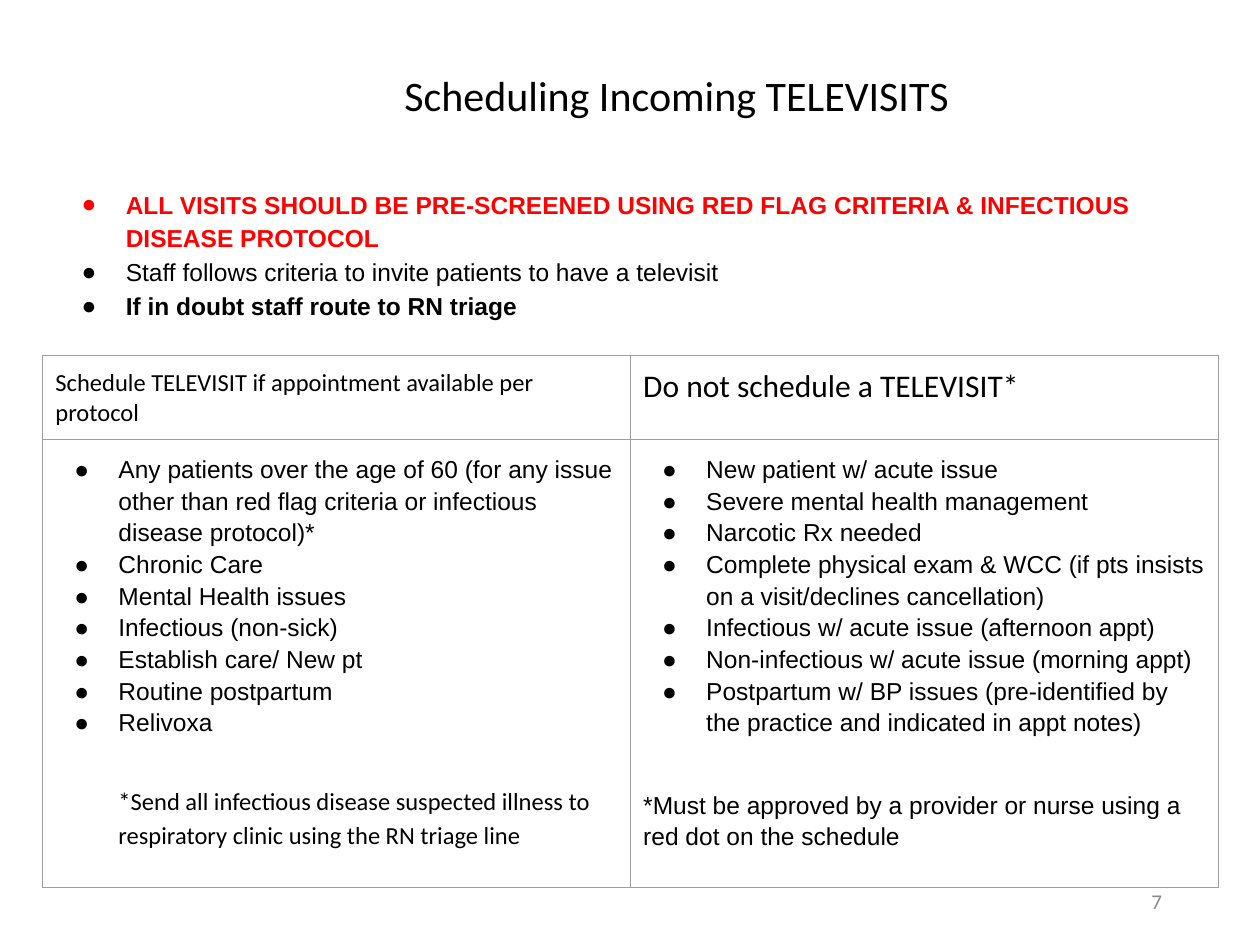
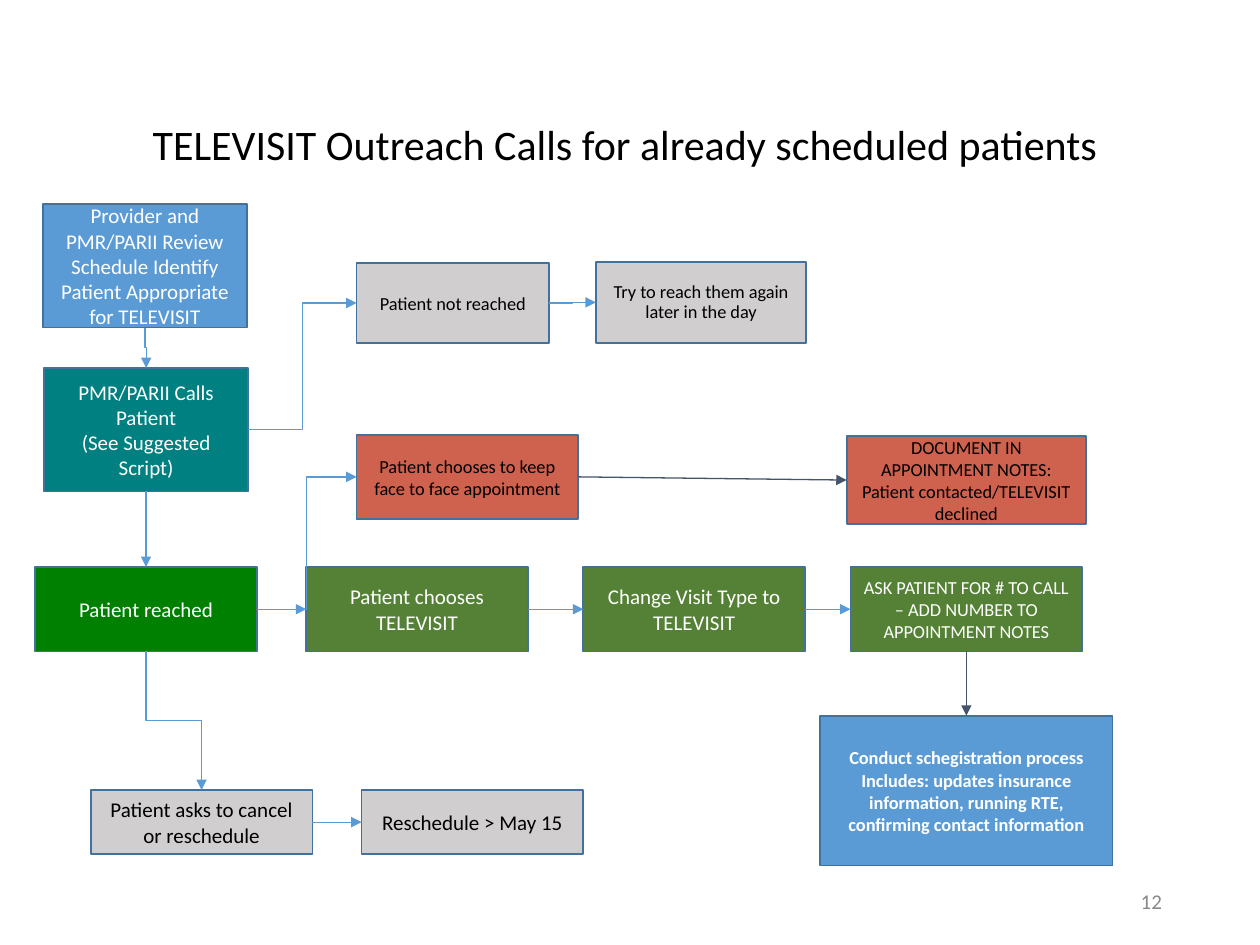
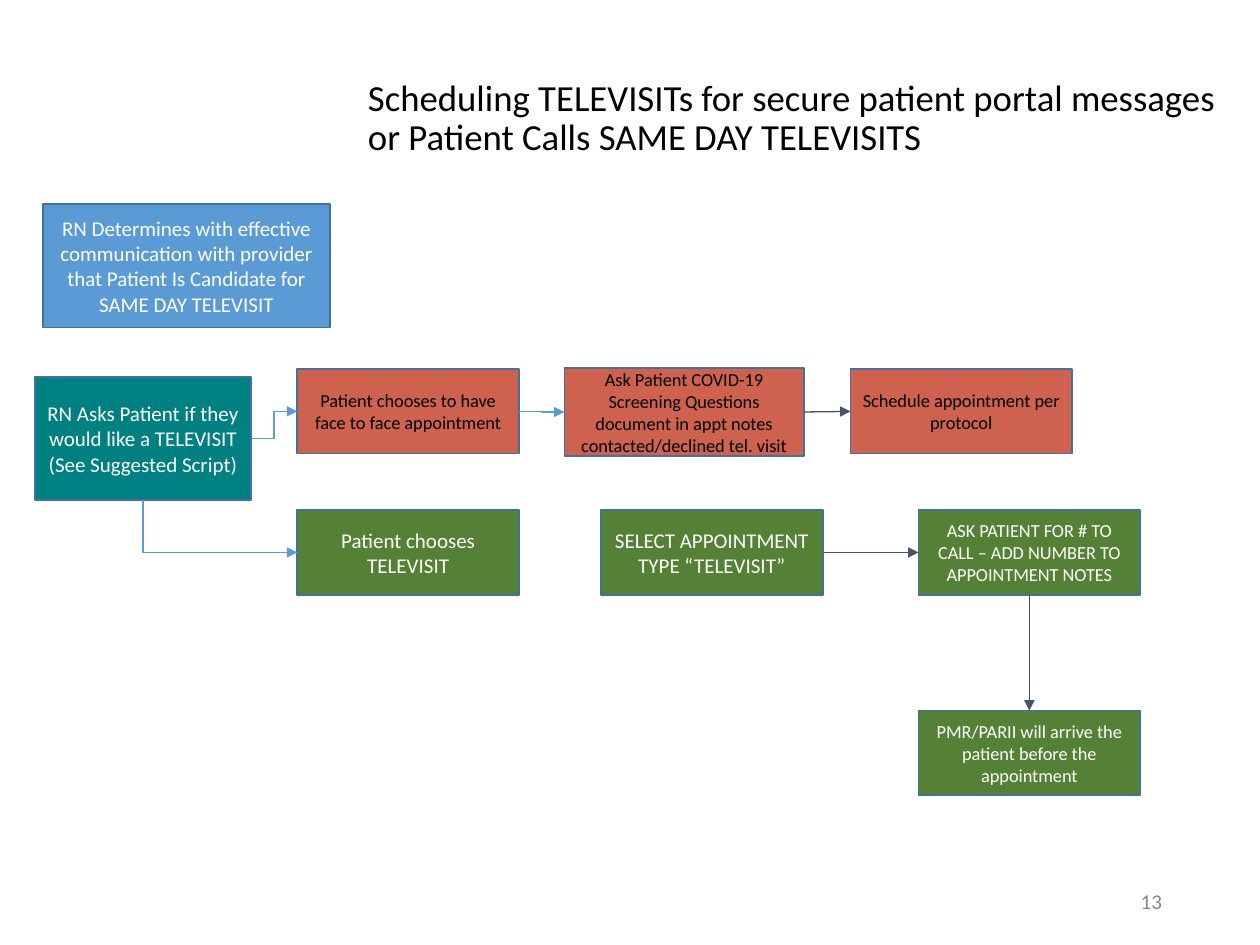
"""Build three slides on scheduling televisits: a criteria table and two call flows."""
from dataclasses import dataclass
from typing import NamedTuple

import lxml.etree
import pptx
import pptx.dml.color
import pptx.enum.shapes
import pptx.enum.text
import pptx.oxml.ns
import pptx.presentation
import pptx.shapes.autoshape
import pptx.shapes.connector
import pptx.slide
import pptx.table
import pptx.text.text
import pptx.util

RGBColor = pptx.dml.color.RGBColor
BLACK = RGBColor(0x00, 0x00, 0x00)
WHITE = RGBColor(0xFF, 0xFF, 0xFF)
RED = RGBColor(0xFF, 0x00, 0x00)
PAGE_GRAY = RGBColor(0x88, 0x88, 0x88)
RULE_GRAY = RGBColor(0x9E, 0x9E, 0x9E)
BLUE = RGBColor(0x5B, 0x9B, 0xD5)
OUTLINE = RGBColor(0x42, 0x71, 0x9B)
NAVY = RGBColor(0x44, 0x54, 0x6A)
TEAL = RGBColor(0x00, 0x80, 0x80)
GREEN = RGBColor(0x00, 0x80, 0x00)
OLIVE = RGBColor(0x54, 0x81, 0x35)
BRICK = RGBColor(0xCF, 0x61, 0x4F)
SILVER = RGBColor(0xD0, 0xCE, 0xCE)

HEADING_FONT, LIST_FONT = "Calibri", "Arial"
LEFT = pptx.enum.text.PP_ALIGN.LEFT
CENTER = pptx.enum.text.PP_ALIGN.CENTER
RIGHT = pptx.enum.text.PP_ALIGN.RIGHT
MIDDLE = pptx.enum.text.MSO_ANCHOR.MIDDLE
TOP_SIDE, LEFT_SIDE, BOTTOM_SIDE, RIGHT_SIDE = range(4)

SLIDE_WIDTH, SLIDE_HEIGHT = pptx.util.Inches(10), pptx.util.Inches(7.5)
COLUMNS, ROWS = 100, 75
LIST_INDENT, BULLET_HANG = 5, 3.5


class Area(NamedTuple):
    column: float
    row: float
    columns: float
    rows: float


@dataclass(frozen=True)
class Line:
    text: str
    size: float = 14
    font: str = LIST_FONT
    color: RGBColor = BLACK
    bold: bool = False
    bullet: bool = False
    indent: float = 0
    spacing: float = 1
    before: float = 0
    align: pptx.enum.text.PP_ALIGN = LEFT


@dataclass(frozen=True)
class Step:
    area: Area
    fill: RGBColor
    lines: tuple[str, ...]
    size: float = 12
    bold: bool = False
    spacing: float = 1


@dataclass(frozen=True)
class Link:
    start: str
    end: str
    leave: int = RIGHT_SIDE
    arrive: int = LEFT_SIDE
    color: RGBColor = BLUE


@dataclass(frozen=True)
class Flow:
    title: Line
    title_area: Area
    page: int
    steps: dict[str, Step]
    links: tuple[Link, ...]


PAGE_AREA = Area(70.7, 69.5, 22.5, 4)
CRITERIA_ROWS = (6.7, 33)
STEP_SIZE = (17.6, 6.7)
RESCHEDULE_SIZE = (17.6, 5.1)
START_SIZE = (16.2, 9.8)

SCREENING_RULES = (
    Line("ALL VISITS SHOULD BE PRE-SCREENED USING RED FLAG CRITERIA & INFECTIOUS DISEASE PROTOCOL",
         color=RED, bold=True, bullet=True, spacing=1.15),
    Line("Staff follows criteria to invite patients to have a televisit", bullet=True, spacing=1.15),
    Line("If in doubt staff route to RN triage", bold=True, bullet=True, spacing=1.15),
)
TELEVISIT_CASES = (
    "Any patients over the age of 60 (for any issue other than red flag criteria or "
    "infectious disease protocol)*",
    "Chronic Care",
    "Mental Health issues",
    "Infectious (non-sick)",
    "Establish care/ New pt",
    "Routine postpartum",
    "Relivoxa",
)
EXCLUDED_CASES = (
    "New patient w/ acute issue",
    "Severe mental health management",
    "Narcotic Rx needed",
    "Complete physical exam & WCC (if pts insists on a visit/declines cancellation)",
    "Infectious w/ acute issue (afternoon appt)",
    "Non-infectious w/ acute issue (morning appt)",
    "Postpartum w/ BP issues (pre-identified by the practice and indicated in appt notes)",
)
RESPIRATORY_NOTE = Line(
    "*Send all infectious disease suspected illness to respiratory clinic using the RN triage line",
    font=HEADING_FONT, indent=LIST_INDENT, spacing=1.15, before=26)
APPROVAL_NOTE = Line(
    "*Must be approved by a provider or nurse using a red dot on the schedule",
    spacing=1.15, before=29)

ASK_NUMBER = ("ASK PATIENT FOR # TO CALL – ADD NUMBER TO APPOINTMENT NOTES",)
CHOOSES_TELEVISIT = ("Patient chooses TELEVISIT",)

OUTREACH = Flow(
    Line("TELEVISIT Outreach Calls for already scheduled patients",
         24, HEADING_FONT, spacing=0.9, align=CENTER),
    Area(2.4, 6.2, 94.4, 10.9),
    12,
    {
        "review": Step(Area(3.4, 16.2, *START_SIZE), BLUE,
                       ("Provider and PMR/PARII Review",
                        "Schedule Identify Patient Appropriate for TELEVISIT")),
        "call": Step(Area(3.5, 29.2, *START_SIZE), TEAL,
                     ("PMR/PARII Calls Patient", "(See Suggested Script)")),
        "keep": Step(Area(28.3, 34.5, *STEP_SIZE), BRICK,
                     ("Patient chooses to keep face to face appointment",), 10.5),
        "televisit": Step(Area(24.3, 45, *STEP_SIZE), OLIVE, CHOOSES_TELEVISIT),
        "cancel": Step(Area(7.2, 62.7, *RESCHEDULE_SIZE), SILVER,
                       ("Patient asks to cancel or reschedule",)),
        "missed": Step(Area(28.3, 20.9, 15.3, 6.3), SILVER, ("Patient not reached",), 10.5),
        "reached": Step(Area(2.8, 45, *STEP_SIZE), GREEN, ("Patient reached",)),
        "retry": Step(Area(47.3, 20.8, 16.7, 6.4), SILVER,
                      ("Try to reach them again later in the day",), 10.5, spacing=0.9),
        "change": Step(Area(46.3, 45, *STEP_SIZE), OLIVE, ("Change Visit Type to TELEVISIT",)),
        "number": Step(Area(67.5, 45, 18.4, 6.7), OLIVE, ASK_NUMBER, 10.5),
        "document": Step(Area(67.2, 34.6, 19, 7), BRICK,
                         ("DOCUMENT IN APPOINTMENT NOTES: Patient contacted/TELEVISIT declined",),
                         10.5),
        "reschedule": Step(Area(28.7, 62.7, *RESCHEDULE_SIZE), SILVER, ("Reschedule > May 15",)),
        "register": Step(Area(65.1, 56.8, 23.2, 11.9), BLUE,
                         ("Conduct schegistration process Includes: updates insurance "
                          "information, running RTE, confirming contact information",),
                         10.5, bold=True),
    },
    (
        Link("call", "missed"),
        Link("reached", "keep"),
        Link("call", "reached", BOTTOM_SIDE, TOP_SIDE),
        Link("missed", "retry"),
        Link("televisit", "change"),
        Link("change", "number"),
        Link("cancel", "reschedule"),
        Link("review", "call", BOTTOM_SIDE, TOP_SIDE),
        Link("reached", "cancel", BOTTOM_SIDE, TOP_SIDE),
        Link("reached", "televisit"),
        Link("keep", "document", color=NAVY),
        Link("number", "register", BOTTOM_SIDE, TOP_SIDE, NAVY),
    ),
)

SAME_DAY = Flow(
    Line("Scheduling TELEVISITs for secure patient portal messages or Patient Calls "
         "SAME DAY TELEVISITS", 21, HEADING_FONT, spacing=0.9),
    Area(28.2, 4, 71.3, 10.9),
    13,
    {
        "candidate": Step(Area(3.4, 16.2, 22.8, 9.8), BLUE,
                          ("RN Determines with effective communication with provider "
                           "that Patient Is Candidate for SAME DAY TELEVISIT",)),
        "ask": Step(Area(2.8, 29.9, 17.1, 9.8), TEAL,
                    ("RN Asks Patient if they would like a TELEVISIT", "(See Suggested Script)")),
        "in person": Step(Area(23.6, 29.3, *STEP_SIZE), BRICK,
                          ("Patient chooses to have face to face appointment",), 10.5),
        "screen": Step(Area(44.8, 29.2, 19, 7), BRICK,
                       ("Ask Patient COVID-19 Screening Questions",
                        "document in appt notes contacted/declined tel. visit"), 10.5),
        "televisit": Step(Area(23.6, 40.5, *STEP_SIZE), OLIVE, CHOOSES_TELEVISIT),
        "select": Step(Area(47.7, 40.5, *STEP_SIZE), OLIVE,
                       ("SELECT APPOINTMENT TYPE “TELEVISIT”",)),
        "number": Step(Area(72.9, 40.5, *STEP_SIZE), OLIVE, ASK_NUMBER, 10.5),
        "schedule": Step(Area(67.5, 29.3, *STEP_SIZE), BRICK,
                         ("Schedule appointment per protocol",), 10.5),
        "arrive": Step(Area(72.9, 56.4, *STEP_SIZE), OLIVE,
                       ("PMR/PARII will arrive the patient before the appointment",), 10.5),
    },
    (
        Link("ask", "televisit", BOTTOM_SIDE, LEFT_SIDE),
        Link("ask", "in person"),
        Link("in person", "screen"),
        Link("screen", "schedule", color=NAVY),
        Link("select", "number", color=NAVY),
        Link("number", "arrive", BOTTOM_SIDE, TOP_SIDE, NAVY),
    ),
)


def across(columns: float) -> int:
    return round(SLIDE_WIDTH * columns / COLUMNS)


def down(rows: float) -> int:
    return round(SLIDE_HEIGHT * rows / ROWS)


def place(area: Area) -> tuple[int, int, int, int]:
    return across(area.column), down(area.row), across(area.columns), down(area.rows)


def add_child(parent: lxml.etree._Element, tag: str, **attributes: str) -> lxml.etree._Element:
    return lxml.etree.SubElement(parent, pptx.oxml.ns.qn(tag), attributes)


def set_margins(frame: pptx.text.text.TextFrame, side: float, edge: float) -> None:
    frame.margin_left = frame.margin_right = across(side)
    frame.margin_top = frame.margin_bottom = down(edge)


def write(frame: pptx.text.text.TextFrame, lines: tuple[Line, ...]) -> None:
    frame.word_wrap = True
    for index, line in enumerate(lines):
        paragraph = frame.add_paragraph() if index else frame.paragraphs[0]
        properties = paragraph._p.get_or_add_pPr()
        if line.bullet:
            properties.set("marL", str(across(LIST_INDENT)))
            properties.set("indent", str(-across(BULLET_HANG)))
            add_child(add_child(properties, "a:buClr"), "a:srgbClr", val=str(line.color))
            add_child(properties, "a:buFont", typeface=LIST_FONT)
            add_child(properties, "a:buChar", char="●")
        elif line.indent:
            properties.set("marL", str(across(line.indent)))
            properties.set("indent", "0")
        paragraph.alignment = line.align
        paragraph.line_spacing = line.spacing
        paragraph.space_before = pptx.util.Pt(line.before)
        run = paragraph.add_run()
        run.text = line.text
        run.font.size = pptx.util.Pt(line.size)
        run.font.name = line.font
        run.font.bold = line.bold
        run.font.color.rgb = line.color


def add_text(slide: pptx.slide.Slide, area: Area, *lines: Line) -> pptx.text.text.TextFrame:
    frame = slide.shapes.add_textbox(*place(area)).text_frame
    set_margins(frame, 1, 0.5)
    write(frame, lines)
    return frame


def start_slide(deck: pptx.presentation.Presentation, title: Line, area: Area,
                page: int) -> pptx.slide.Slide:
    slide = deck.slides.add_slide(deck.slide_layouts[5])
    heading = slide.shapes.title
    heading.left, heading.top, heading.width, heading.height = place(area)
    frame = heading.text_frame
    frame.auto_size = pptx.enum.text.MSO_AUTO_SIZE.NONE
    frame.vertical_anchor = MIDDLE
    set_margins(frame, 1, 0.5)
    write(frame, (title,))
    number = Line(str(page), 12, HEADING_FONT, PAGE_GRAY, align=RIGHT)
    add_text(slide, PAGE_AREA, number).vertical_anchor = MIDDLE
    return slide


def fill_cell(cell: pptx.table._Cell, lines: tuple[Line, ...]) -> None:
    cell.margin_left = cell.margin_right = across(1)
    cell.margin_top = cell.margin_bottom = down(1)
    write(cell.text_frame, lines)
    properties = cell._tc.get_or_add_tcPr()
    for side in ("a:lnL", "a:lnR", "a:lnT", "a:lnB"):
        border = add_child(properties, side, w=str(pptx.util.Pt(0.75)))
        add_child(add_child(border, "a:solidFill"), "a:srgbClr", val=str(RULE_GRAY))
    cell.fill.background()


def bullets(items: tuple[str, ...]) -> tuple[Line, ...]:
    return tuple(Line(item, bullet=True, spacing=1.15) for item in items)


def add_criteria_slide(deck: pptx.presentation.Presentation) -> None:
    title = Line("Scheduling Incoming TELEVISITS", 24, HEADING_FONT, spacing=0.9)
    slide = start_slide(deck, title, Area(31.1, 3.8, 52.2, 7.9), 7)
    add_text(slide, Area(4, 14.2, 89.7, 12.8), *SCREENING_RULES)
    cells = (
        ((Line("Schedule TELEVISIT if appointment available per protocol", font=HEADING_FONT),),
         (Line("Do not schedule a TELEVISIT*", 18, HEADING_FONT),)),
        ((*bullets(TELEVISIT_CASES), RESPIRATORY_NOTE),
         (*bullets(EXCLUDED_CASES), APPROVAL_NOTE)),
    )
    table_area = Area(3.4, 28.2, 93.3, sum(CRITERIA_ROWS))
    criteria = slide.shapes.add_table(2, 2, *place(table_area)).table
    criteria.first_row = criteria.horz_banding = False
    for row, rows, contents in zip(criteria.rows, CRITERIA_ROWS, cells):
        row.height = down(rows)
        for cell, lines in zip(row.cells, contents):
            fill_cell(cell, lines)


def add_step(slide: pptx.slide.Slide, step: Step) -> pptx.shapes.autoshape.Shape:
    process = pptx.enum.shapes.MSO_SHAPE.FLOWCHART_PROCESS
    box = slide.shapes.add_shape(process, *place(step.area))
    box.shadow.inherit = False
    box.fill.solid()
    box.fill.fore_color.rgb = step.fill
    box.line.color.rgb = OUTLINE
    box.line.width = pptx.util.Pt(1)
    box.text_frame.vertical_anchor = MIDDLE
    set_margins(box.text_frame, 0.7, 0.4)
    color = BLACK if step.fill in (BRICK, SILVER) else WHITE
    write(box.text_frame, tuple(
        Line(text, step.size, HEADING_FONT, color, step.bold, spacing=step.spacing, align=CENTER)
        for text in step.lines))
    return box


def turn_down(arrow: pptx.shapes.connector.Connector) -> None:
    run, drop = arrow.end_x - arrow.begin_x, arrow.end_y - arrow.begin_y
    middle_x, middle_y = arrow.begin_x + run // 2, arrow.begin_y + drop // 2
    arrow.left, arrow.top = middle_x - drop // 2, middle_y - run // 2
    arrow.width, arrow.height = drop, run
    frame = arrow._element.spPr.find(pptx.oxml.ns.qn("a:xfrm"))
    frame.set("rot", "16200000")
    frame.set("flipH", "1")


def add_link(slide: pptx.slide.Slide, link: Link,
             boxes: dict[str, pptx.shapes.autoshape.Shape]) -> None:
    kinds = pptx.enum.shapes.MSO_CONNECTOR
    bent = link.color == BLUE
    arrow = slide.shapes.add_connector(kinds.ELBOW if bent else kinds.STRAIGHT, 0, 0, 0, 0)
    arrow.begin_connect(boxes[link.start], link.leave)
    arrow.end_connect(boxes[link.end], link.arrive)
    arrow.line.color.rgb = link.color
    arrow.line.width = pptx.util.Pt(0.75)
    properties = arrow._element.spPr
    add_child(properties.find(pptx.oxml.ns.qn("a:ln")), "a:tailEnd", type="triangle")
    add_child(properties, "a:effectLst")
    if bent and link.leave == BOTTOM_SIDE:
        turn_down(arrow)
        if link.arrive == LEFT_SIDE:
            properties.find(pptx.oxml.ns.qn("a:prstGeom")).set("prst", "bentConnector2")


def add_flow_slide(deck: pptx.presentation.Presentation, flow: Flow) -> None:
    slide = start_slide(deck, flow.title, flow.title_area, flow.page)
    boxes = {key: add_step(slide, step) for key, step in flow.steps.items()}
    for link in flow.links:
        add_link(slide, link, boxes)


def main() -> None:
    deck = pptx.Presentation()
    deck.slide_width, deck.slide_height = SLIDE_WIDTH, SLIDE_HEIGHT
    add_criteria_slide(deck)
    for flow in (OUTREACH, SAME_DAY):
        add_flow_slide(deck, flow)
    deck.save("out.pptx")


if __name__ == "__main__":
    main()
